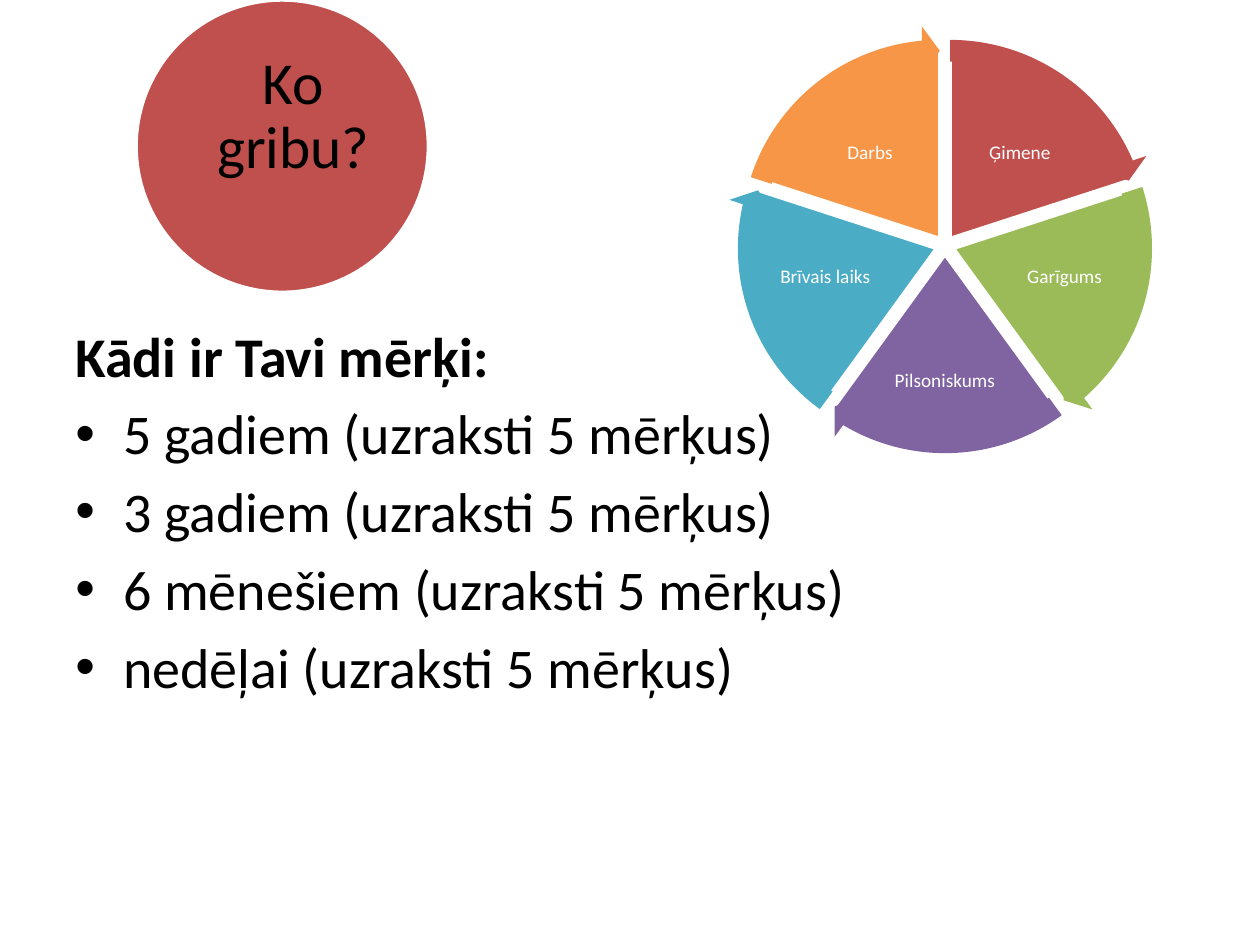
from math import cos, radians, sin

from lxml import etree
from pptx import Presentation
from pptx.dml.color import RGBColor
from pptx.enum.shapes import MSO_SHAPE
from pptx.enum.text import MSO_ANCHOR, PP_ALIGN
from pptx.oxml.ns import qn
from pptx.util import Inches, Pt

FONT = "Calibri"
BLACK = RGBColor(0x00, 0x00, 0x00)
WHITE = RGBColor(0xFF, 0xFF, 0xFF)
RED = RGBColor(0xC0, 0x50, 0x4D)
GREEN = RGBColor(0x9B, 0xBB, 0x59)
PURPLE = RGBColor(0x80, 0x64, 0xA2)
BLUE = RGBColor(0x4B, 0xAC, 0xC6)
ORANGE = RGBColor(0xF7, 0x96, 0x46)

# label, colour, label box (left, top, width, height in inches)
LIFE_AREAS = [
    ("Ģimene", RED, (7.61, 0.89, 0.97, 0.65)),
    ("Garīgums", GREEN, (8, 1.84, 0.9, 0.72)),
    ("Pilsoniskums", PURPLE, (7.07, 2.63, 0.86, 0.79)),
    ("Brīvais laiks", BLUE, (6.1, 1.84, 0.9, 0.72)),
    ("Darbs", ORANGE, (6.42, 0.89, 0.97, 0.65)),
]
GOALS = [
    "5 gadiem (uzraksti 5 mērķus)",
    "3 gadiem (uzraksti 5 mērķus)",
    "6 mēnešiem (uzraksti 5 mērķus)",
    "nedēļai (uzraksti 5 mērķus)",
]


def format_runs(p, size, color, bold=False):
    for r in p.runs:
        r.font.name = FONT
        r.font.size = Pt(size)
        r.font.bold = bold
        r.font.color.rgb = color


def add_filled(shapes, kind, box, color, outlined=True):
    sp = shapes.add_shape(kind, *map(Inches, box))
    sp.shadow.inherit = False
    sp.fill.solid()
    sp.fill.fore_color.rgb = color
    if outlined:
        sp.line.color.rgb = WHITE
        sp.line.width = Pt(2)
    else:
        sp.line.fill.background()
    return sp


def add_label(shapes, box, text, size, color, inset):
    tf = shapes.add_textbox(*map(Inches, box)).text_frame
    tf.word_wrap = True
    tf.vertical_anchor = MSO_ANCHOR.MIDDLE
    tf.margin_left = tf.margin_right = Inches(inset)
    tf.margin_top = tf.margin_bottom = Inches(inset)
    p = tf.paragraphs[0]
    p.text = text
    p.alignment = PP_ALIGN.CENTER
    p.line_spacing = 0.9
    p.space_after = Pt(size * 0.35)
    format_runs(p, size, color)


def add_question(slide, left, top, size):
    shapes = slide.shapes.add_group_shape().shapes
    add_filled(shapes, MSO_SHAPE.OVAL, (left, top, size, size), RED)
    add_label(shapes, (left + 0.4, top + 0.41, 1.7, 1.04), "Ko gribu?", 34, BLACK, 0)


def add_life_wheel(slide, cx, cy, pie_size, arrow_size, gap):
    """Pie of equal wedges moved out from the centre by gap, each with a rim arrow."""
    shapes = slide.shapes.add_group_shape().shapes
    step = 360 / len(LIFE_AREAS)

    def wedge_box(i, size):
        middle = radians(270 + (i + 0.5) * step)
        return (cx + gap * cos(middle) - size / 2,
                cy + gap * sin(middle) - size / 2, size, size)

    def wedge_angles(i):
        """Start and end in the units of shape adjustments (0.6 per degree)."""
        return [(270 + k * step) % 360 * 0.6 for k in (i, i + 1)]

    for i, (text, color, label_box) in enumerate(LIFE_AREAS):
        pie = add_filled(shapes, MSO_SHAPE.PIE, wedge_box(i, pie_size), color)
        pie.adjustments[0], pie.adjustments[1] = wedge_angles(i)
        add_label(shapes, label_box, text, 11, WHITE, 0.02)

    head_angle = 3.275
    for i, (_, color, _) in enumerate(LIFE_AREAS):
        arrow = add_filled(shapes, MSO_SHAPE.CIRCULAR_ARROW,
                           wedge_box(i, arrow_size), color, outlined=False)
        start, end = wedge_angles(i)
        for k, value in enumerate((0.051, head_angle, end - head_angle, start, 0.059)):
            arrow.adjustments[k] = value


def add_goals(slide, left, top, width, height):
    tf = slide.shapes.add_textbox(*map(Inches, (left, top, width, height))).text_frame
    tf.word_wrap = True
    for i, text in enumerate(["Kādi ir Tavi mērķi:"] + GOALS):
        p = tf.add_paragraph() if i else tf.paragraphs[0]
        p.text = text
        p.space_before = Pt(6)
        format_runs(p, 32, BLACK, bold=i == 0)
        pPr = p._p.get_or_add_pPr()
        pPr.set("marL", str(Inches(0.38)))
        pPr.set("indent", str(Inches(-0.38)))
        if i:
            etree.SubElement(pPr, qn("a:buFont"), typeface="Arial")
            etree.SubElement(pPr, qn("a:buChar"), char="•")


def main():
    prs = Presentation()
    prs.slide_width, prs.slide_height = Inches(10), Inches(7.5)
    slide = prs.slides.add_slide(prs.slide_layouts[6])
    add_goals(slide, 0.5, 2.5, 9, 4.25)
    add_question(slide, 1.08, 0, 2.32)
    add_life_wheel(slide, 7.5, 1.95, 3.01, 3.38, 0.07)
    prs.save("out.pptx")


if __name__ == "__main__":
    main()
